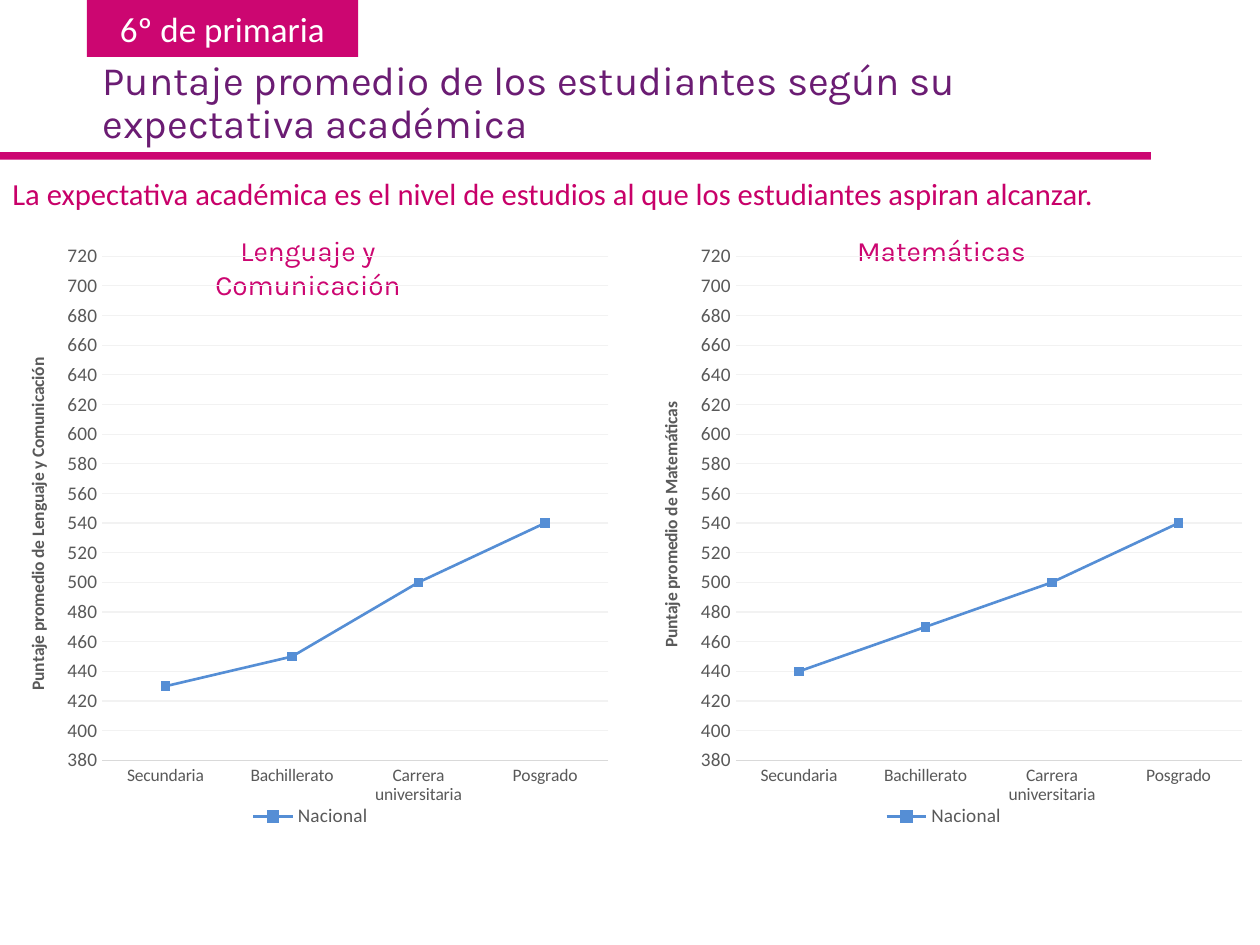
from dataclasses import dataclass

from lxml.etree import SubElement
from pptx import Presentation
from pptx.chart.data import CategoryChartData
from pptx.dml.color import RGBColor
from pptx.enum.chart import XL_CHART_TYPE, XL_LEGEND_POSITION, XL_MARKER_STYLE, XL_TICK_MARK
from pptx.enum.shapes import MSO_SHAPE
from pptx.enum.text import MSO_ANCHOR, PP_ALIGN
from pptx.oxml import parse_xml
from pptx.oxml.ns import nsdecls, qn
from pptx.util import Cm, Pt


@dataclass(frozen=True)
class Theme:
    magenta: str = "CC0671"
    crimson: str = "C80069"
    purple: str = "6B1C73"
    white: str = "FFFFFF"
    grey: str = "595959"
    axis: str = "D9D9D9"
    grid: str = "F2F2F2"
    series: str = "558ED5"
    body_font: str = "Calibri"
    heading_font: str = "Karla"
    title_size: float = 23
    tag_size: float = 20
    note_size: float = 17.5
    heading_size: float = 16
    scale_size: float = 11
    label_size: float = 10


@dataclass(frozen=True)
class Box:
    left: float
    top: float
    width: float
    height: float

    def inner(self, left, top, width, height):
        return Box(self.left + left, self.top + top, width, height)

    def lengths(self):
        return Cm(self.left), Cm(self.top), Cm(self.width), Cm(self.height)


THEME = Theme()
LEVELS = ["Secundaria", "Bachillerato", "Carrera universitaria", "Posgrado"]
SUBJECTS = [
    ("Lenguaje y Comunicación", [430, 450, 500, 540], 0.2),
    ("Matemáticas", [440, 470, 500, 540], 0.27),
]


def style_font(font, size, color, name=THEME.body_font, bold=False):
    font.size = Pt(size)
    font.name = name
    font.bold = bold
    font.color.rgb = RGBColor.from_string(color)


def write_text(frame, text, *, size, color, font=THEME.body_font,
               align=PP_ALIGN.LEFT, anchor=MSO_ANCHOR.TOP, spacing=None, before=None):
    frame.word_wrap = True
    frame.vertical_anchor = anchor
    para = frame.paragraphs[0]
    para.alignment = align
    para.line_spacing = spacing
    para.space_before = before
    span = para.add_run()
    span.text = text
    style_font(span.font, size, color, font)


def add_text(page, box, text, **style):
    write_text(page.shapes.add_textbox(*box.lengths()).text_frame, text, **style)


def add_bar(page, box):
    bar = page.shapes.add_shape(MSO_SHAPE.RECTANGLE, *box.lengths())
    bar.shadow.inherit = False
    bar.fill.solid()
    bar.fill.fore_color.rgb = RGBColor.from_string(THEME.magenta)
    bar.line.fill.background()
    return bar


def set_layout(layout, inner=False, **position):
    for child in list(layout):
        layout.remove(child)
    manual = SubElement(layout, qn("c:manualLayout"))
    if inner:
        SubElement(manual, qn("c:layoutTarget")).set("val", "inner")
    for mode in ("xMode", "yMode"):
        SubElement(manual, qn(f"c:{mode}")).set("val", "edge")
    for key, value in position.items():
        SubElement(manual, qn(f"c:{key}")).set("val", str(value))


def layout_of(element, after=None):
    layout = element.find(qn("c:layout"))
    if layout is None:
        layout = parse_xml(f"<c:layout {nsdecls('c')}/>")
        if after is None:
            element.insert(0, layout)
        else:
            element.find(qn(after)).addnext(layout)
    return layout


def clear_background(chart):
    empty = f"<c:spPr {nsdecls('c', 'a')}><a:noFill/><a:ln><a:noFill/></a:ln></c:spPr>"
    frame = chart.element.find(qn("c:chart"))
    frame.addnext(parse_xml(empty))
    frame.find(qn("c:plotArea")).append(parse_xml(empty))


def style_axes(chart, caption, caption_top):
    levels, scores = chart.category_axis, chart.value_axis
    for axis, size in ((levels, THEME.label_size), (scores, THEME.scale_size)):
        axis.major_tick_mark = axis.minor_tick_mark = XL_TICK_MARK.NONE
        style_font(axis.tick_labels.font, size, THEME.grey)
    scores.minimum_scale, scores.maximum_scale, scores.major_unit = 380, 730, 20
    scores.format.line.fill.background()
    for line, color in ((levels.format.line, THEME.axis),
                        (scores.major_gridlines.format.line, THEME.grid)):
        line.color.rgb = RGBColor.from_string(color)
        line.width = Pt(0.75)
    title = scores.axis_title
    span = title.text_frame.paragraphs[0].add_run()
    span.text = caption
    style_font(span.font, THEME.label_size, THEME.grey, bold=True)
    set_layout(layout_of(title._element, "c:tx"), x=0.037, y=caption_top)


def style_series(series):
    blue = RGBColor.from_string(THEME.series)
    series.smooth = False
    series.format.line.color.rgb = blue
    series.format.line.width = Pt(1.5)
    series.marker.style = XL_MARKER_STYLE.SQUARE
    series.marker.size = 5
    series.marker.format.fill.solid()
    series.marker.format.fill.fore_color.rgb = blue
    series.marker.format.line.color.rgb = blue


def add_score_chart(page, box, subject, scores, caption_top):
    data = CategoryChartData(number_format="0")
    data.categories = LEVELS
    data.add_series("Nacional", scores)
    chart = page.shapes.add_chart(XL_CHART_TYPE.LINE_MARKERS, *box.lengths(), data).chart
    style_font(chart.font, THEME.label_size, THEME.grey)
    chart.has_title = False
    chart.plots[0].vary_by_categories = False
    chart.has_legend = True
    chart.legend.position = XL_LEGEND_POSITION.BOTTOM
    chart.legend.include_in_layout = False
    style_font(chart.legend.font, THEME.scale_size, THEME.grey)
    style_axes(chart, f"Puntaje promedio de {subject}", caption_top)
    style_series(chart.plots[0].series[0])
    plot_area = chart.element.find(qn("c:chart")).find(qn("c:plotArea"))
    set_layout(layout_of(plot_area), inner=True, x=0.165, y=0.021, w=0.816, h=0.822)
    set_layout(layout_of(chart.legend._element, "c:legendPos"), x=0.398, y=0.905)
    clear_background(chart)


def add_header(page, box):
    tag = add_bar(page, box.inner(1.75, 0, 5.47, 1.15))
    write_text(tag.text_frame, "6º de primaria", size=THEME.tag_size, color=THEME.white,
               align=PP_ALIGN.CENTER, anchor=MSO_ANCHOR.MIDDLE)
    add_text(page, box.inner(1.82, 1.1, 21.89, 2.34),
             "Puntaje promedio de los estudiantes según su expectativa académica",
             size=THEME.title_size, color=THEME.purple, font=THEME.heading_font, spacing=0.9)
    add_bar(page, box.inner(0, 3.07, 23.2, 0.15))
    add_text(page, box.inner(0, 3.4, box.width, 1.02),
             "La expectativa académica es el nivel de estudios al que los estudiantes "
             "aspiran alcanzar.", size=THEME.note_size, color=THEME.crimson)


def add_subject_panel(page, box, subject, scores, caption_top):
    add_text(page, box.inner(2.77, -0.01, 6.88, 1.09), subject, size=THEME.heading_size,
             color=THEME.magenta, font=THEME.heading_font, align=PP_ALIGN.CENTER,
             before=Pt(10))
    add_score_chart(page, box, subject, scores, caption_top)


def main():
    deck = Presentation()
    deck.slide_width, deck.slide_height = Cm(25.4), Cm(19.05)
    page = deck.slides.add_slide(deck.slide_layouts[6])
    add_header(page, Box(0, 0, 25.4, 4.42))
    for column, subject in enumerate(SUBJECTS):
        add_subject_panel(page, Box(column * 12.77, 4.6, 12.5, 12.73), *subject)
    deck.save("out.pptx")


if __name__ == "__main__":
    main()
